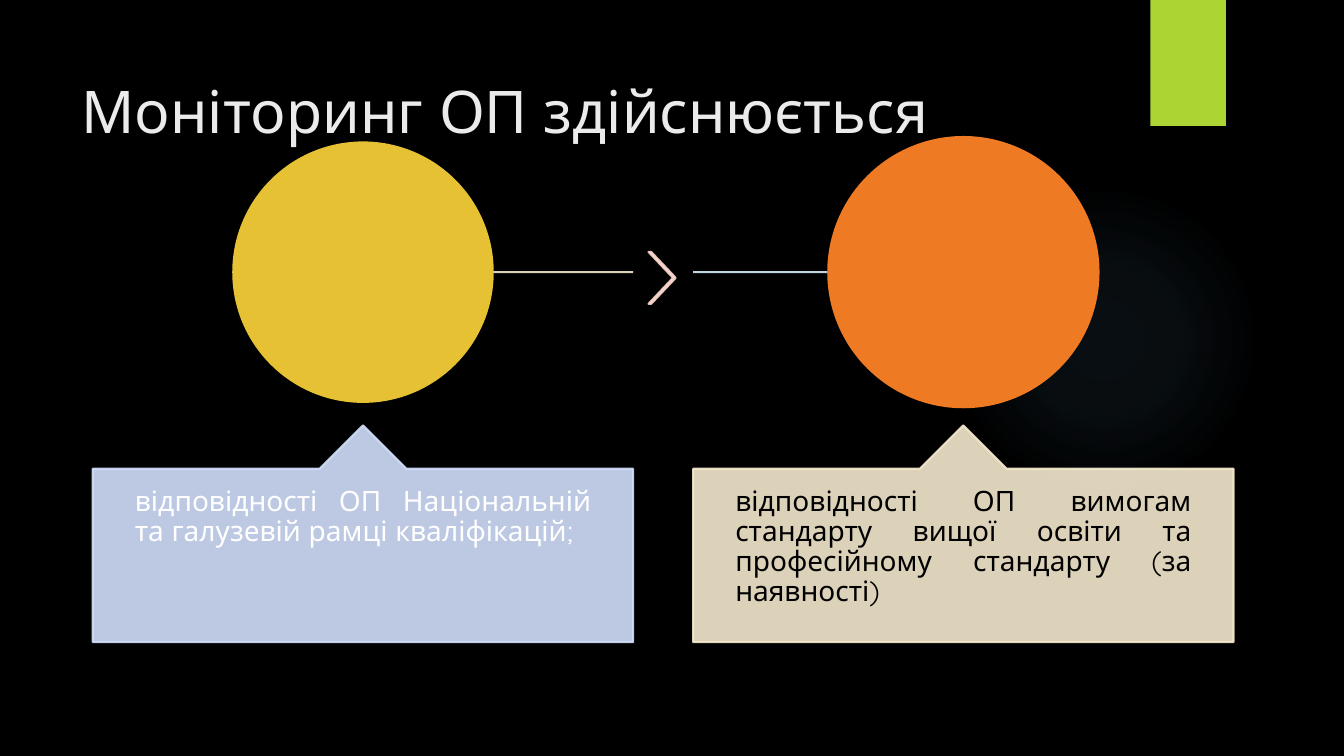
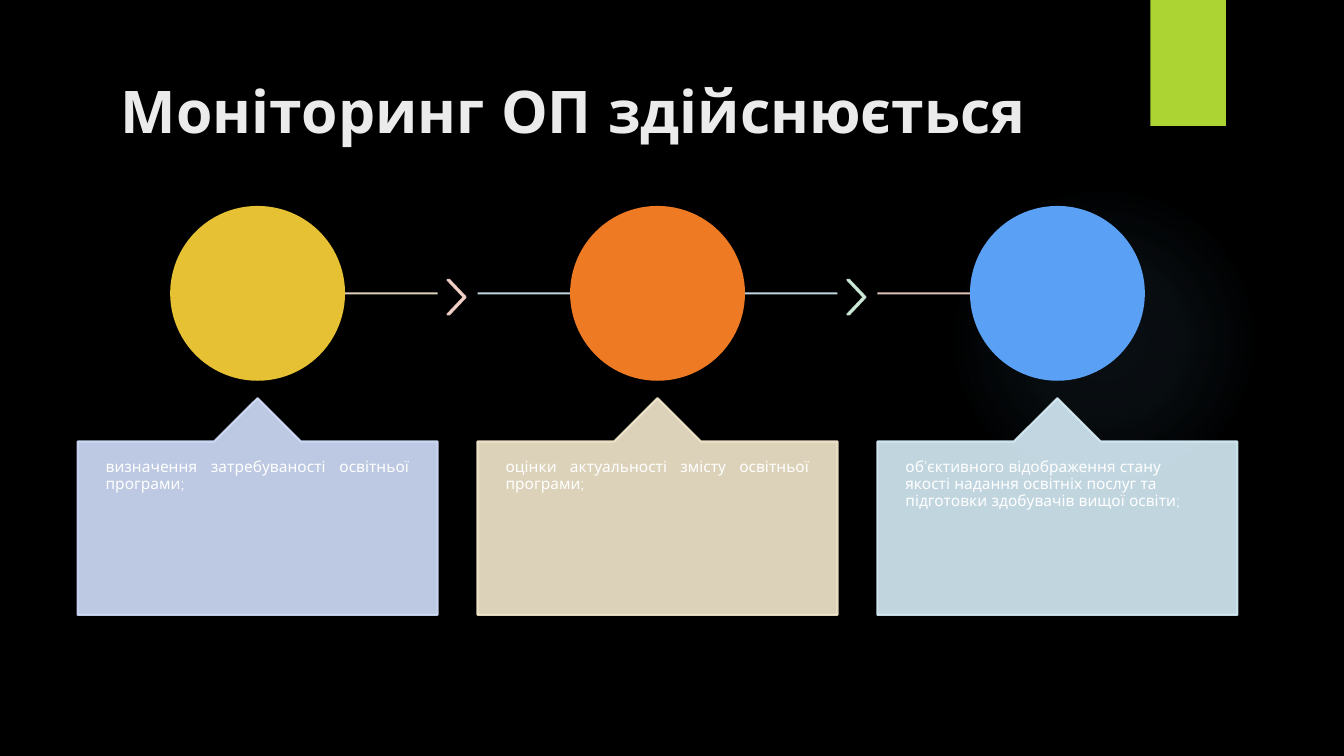
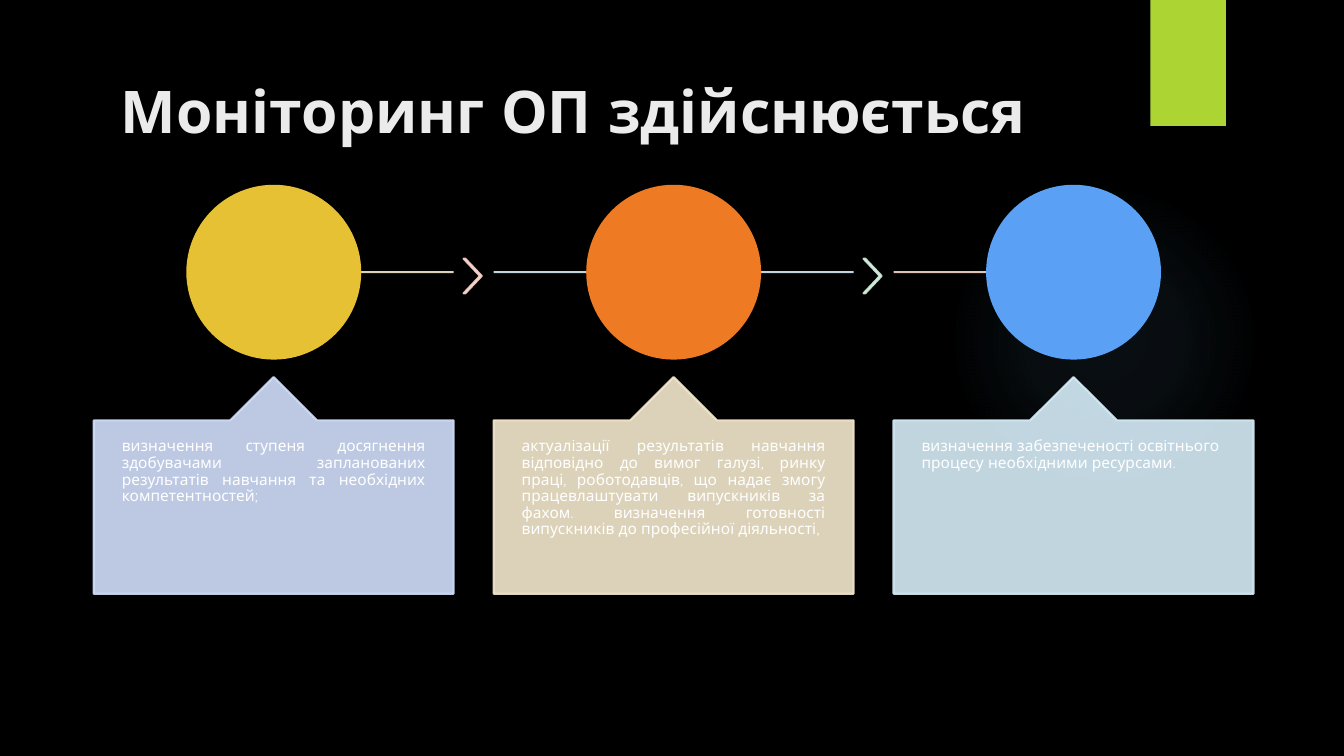
from lxml.etree import SubElement
from pptx import Presentation
from pptx.dml.color import RGBColor
from pptx.enum.shapes import MSO_CONNECTOR as Connector, MSO_SHAPE as Shape
from pptx.enum.text import MSO_ANCHOR as Anchor, MSO_AUTO_SIZE as AutoSize, PP_ALIGN as Align
from pptx.oxml import parse_xml
from pptx.oxml.ns import nsdecls, qn
from pptx.util import Inches, Pt


class Theme:
    font = "Quicksand"
    background, title, band, glow = "000000", "EBEBEB", "ACD433", "7AC4F0"
    light, dark = "FFFFFF", "010000"
    circles = ["E6C133", "EF7A24", "5AA0F5"]
    lines = ["F5E9CE", "D6EDF8", "F9D7CD"]
    chevrons = ["F9D7CD", "D3F0DF"]
    callouts = ["D2DFFB", "F5E9CE", "D6EDF8"]
    title_size, outline = Pt(42), Pt(1.5)
    opacity = 90


def add_preset(slide, preset, left, top, width, height, color, opacity=100):
    """Add a preset shape whose outline has the colour of its fill; lengths in inches."""
    shape = slide.shapes.add_shape(
        preset, Inches(left), Inches(top), Inches(width), Inches(height))
    shape.shadow.inherit = False
    shape.fill.solid()
    shape.fill.fore_color.rgb = RGBColor.from_string(color)
    shape.line.color.rgb = RGBColor.from_string(color)
    shape.line.width = Theme.outline
    set_opacity(shape, opacity)
    return shape


def set_opacity(shape, percent):
    if percent < 100:
        for color in shape.element.spPr.iter(qn("a:srgbClr")):
            SubElement(color, qn("a:alpha"), val=str(percent * 1000))


# Shares of the column width
GAP, CIRCLE, SIDE_INSET = 0.111, 0.48, 0.078
# Shares of the circle's diameter
CHEVRON_WIDTH, CHEVRON_HEIGHT, CHEVRON_DROP = 0.105, 0.2, 0.022
CALLOUT_HEIGHT, CALLOUT_INSET = 2.15, 0.18

# Each card: text, text colour, alignment
SLIDES = [
    dict(title="Моніторинг ОП здійснюється", bold=False, align=Align.LEFT,
         left=0.92, column=5.36, line_y=2.7, callout_y=4.22, size=Pt(20), cards=[
             ("відповідності ОП Національній та галузевій рамці кваліфікацій;",
              Theme.light, Align.JUSTIFY),
             ("відповідності ОП вимогам стандарту вищої освіти та професійному "
              "стандарту (за наявності)", Theme.dark, Align.JUSTIFY)]),
    dict(title="Моніторинг ОП здійснюється ", bold=True, align=Align.CENTER,
         left=0.77, column=3.57, line_y=2.91, callout_y=3.95, size=Pt(11), cards=[
             ("визначення затребуваності освітньої програми;", Theme.light, Align.JUSTIFY),
             ("оцінки актуальності змісту освітньої програми;", Theme.light, Align.JUSTIFY),
             ("об’єктивного відображення стану якості надання освітніх послуг та "
              "підготовки здобувачів вищої освіти;", Theme.light, Align.LEFT)]),
    dict(title="Моніторинг ОП здійснюється ", bold=True, align=Align.CENTER,
         left=0.93, column=3.57, line_y=2.7, callout_y=3.74, size=Pt(11), cards=[
             ("визначення ступеня досягнення здобувачами запланованих результатів "
              "навчання та необхідних компетентностей;", Theme.light, Align.JUSTIFY),
             ("актуалізації результатів навчання відповідно до вимог галузі, ринку "
              "праці, роботодавців, що надає змогу працевлаштувати випускників за "
              "фахом. визначення готовності випускників до професійної діяльності,",
              Theme.light, Align.JUSTIFY),
             ("визначення забезпеченості освітнього процесу необхідними ресурсами.",
              Theme.light, Align.LEFT)]),
]

presentation = Presentation()
presentation.slide_width, presentation.slide_height = Inches(13.33), Inches(7.5)
layout = presentation.slide_layouts.get_by_name("Title Only")
layout.background.fill.solid()
layout.background.fill.fore_color.rgb = RGBColor.from_string(Theme.background)
layout_title = layout.placeholders[0]
layout_title.left, layout_title.top = Inches(0.71), Inches(0.69)
layout_title.width, layout_title.height = Inches(10.12), Inches(1.11)

for number, content in enumerate(SLIDES):
    slide = presentation.slides.add_slide(layout)

    # Shapes can only be added to a slide, so the shared ones move to the layout
    if number == 0:
        glow = add_preset(slide, Shape.OVAL, 9.41, 1.83, 3.08, 3.08, Theme.glow)
        band = add_preset(slide, Shape.RECTANGLE, 11.41, 0, 0.75, 1.25, Theme.band)
        stops = "".join(
            f'<a:gs pos="{position}000"><a:srgbClr val="{Theme.glow}">'
            f'<a:alpha val="{alpha}000"/></a:srgbClr></a:gs>'
            for position, alpha in [(0, 7), (36, 6), (69, 0)])
        gradient = parse_xml(
            f'<a:gradFill {nsdecls("a")}><a:gsLst>{stops}</a:gsLst><a:path path="circle">'
            '<a:fillToRect l="50000" t="50000" r="50000" b="50000"/></a:path></a:gradFill>')
        properties = glow.element.spPr
        properties.replace(properties.find(qn("a:solidFill")), gradient)
        for position, shape in enumerate([glow, band], start=2):
            shape.line.fill.background()
            layout.shapes.element.insert(position, shape.element)

    column, line_y = content["column"], content["line_y"]
    diameter = column * CIRCLE
    last = len(content["cards"]) - 1
    for index, (text, text_color, align) in enumerate(content["cards"]):
        left = content["left"] + index * column * (1 + GAP)
        right, center = left + column, left + column / 2

        start = center if index == 0 else left
        end = center if index == last else right
        line = slide.shapes.add_connector(
            Connector.STRAIGHT, Inches(start), Inches(line_y), Inches(end), Inches(line_y))
        line.line.color.rgb = RGBColor.from_string(Theme.lines[index])
        line.line.width = Theme.outline
        set_opacity(line, Theme.opacity)
        SubElement(line.element.spPr, qn("a:effectLst"))

        if index < last:
            width, height = diameter * CHEVRON_WIDTH, diameter * CHEVRON_HEIGHT
            chevron = add_preset(
                slide, Shape.CHEVRON, right + (column * GAP - width) / 2 - 0.01,
                line_y + diameter * CHEVRON_DROP - height / 2, width, height,
                Theme.chevrons[index], Theme.opacity)
            chevron.adjustments[0] = 0.9

        size = column / 2 if number == 0 and index == last else diameter
        add_preset(slide, Shape.OVAL, center - size / 2, line_y - size / 2,
                   size, size, Theme.circles[index])

        callout = add_preset(slide, Shape.UP_ARROW_CALLOUT, left, content["callout_y"],
                             column, CALLOUT_HEIGHT, Theme.callouts[index], Theme.opacity)
        for position, value in enumerate([0.5, 0.2, 0.2, 1]):
            callout.adjustments[position] = value
        frame = callout.text_frame
        frame.word_wrap = True
        frame.vertical_anchor = Anchor.TOP
        frame.margin_left = frame.margin_right = Inches(column * SIDE_INSET)
        frame.margin_top = frame.margin_bottom = Inches(CALLOUT_INSET)
        paragraph = frame.paragraphs[0]
        paragraph.alignment = align
        paragraph.line_spacing = 0.9
        run = paragraph.add_run()
        run.text = text
        run.font.name, run.font.size = Theme.font, content["size"]
        run.font.color.rgb = RGBColor.from_string(text_color)

    title = slide.shapes.title
    title.text_frame.vertical_anchor = Anchor.TOP
    title.text_frame.auto_size = AutoSize.NONE
    paragraph = title.text_frame.paragraphs[0]
    paragraph.alignment = content["align"]
    run = paragraph.add_run()
    run.text = content["title"]
    run.font.name, run.font.size = Theme.font, Theme.title_size
    run.font.bold = content["bold"]
    run.font.color.rgb = RGBColor.from_string(Theme.title)
    slide.shapes.element.append(title.element)

presentation.save("out.pptx")
